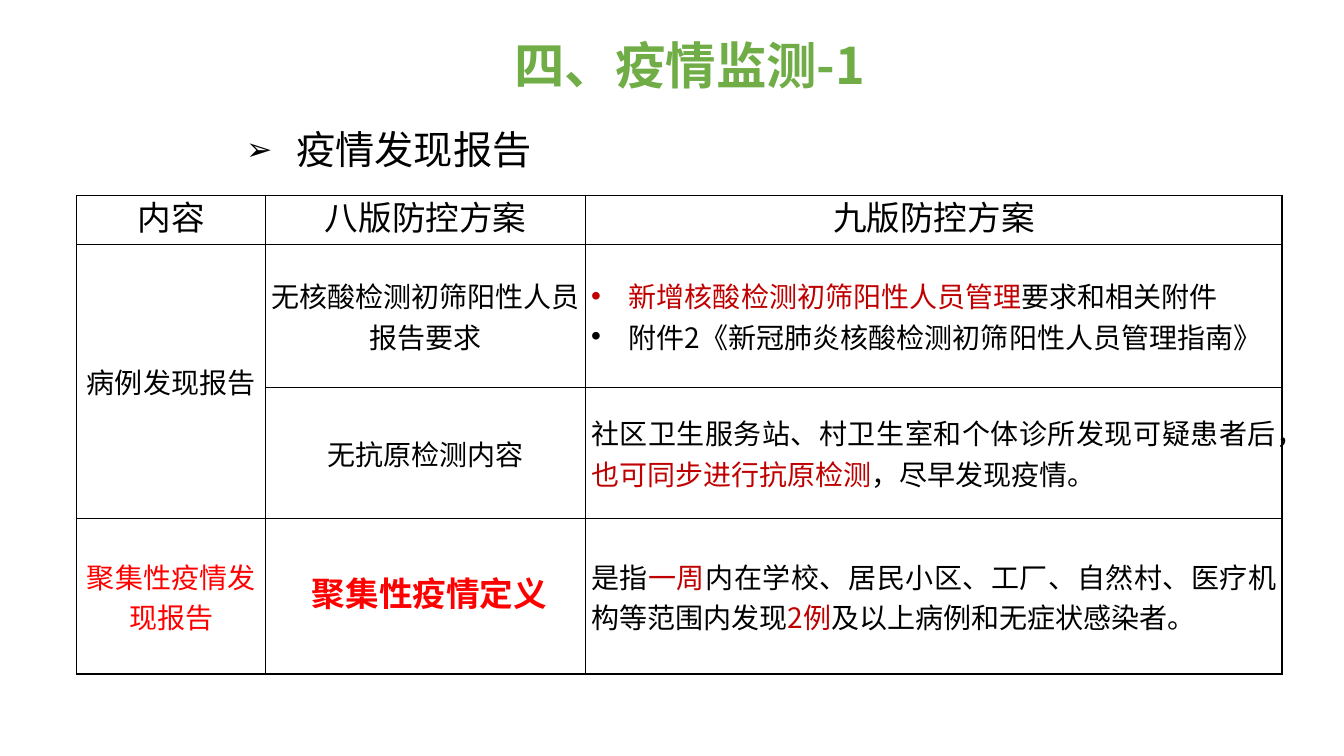
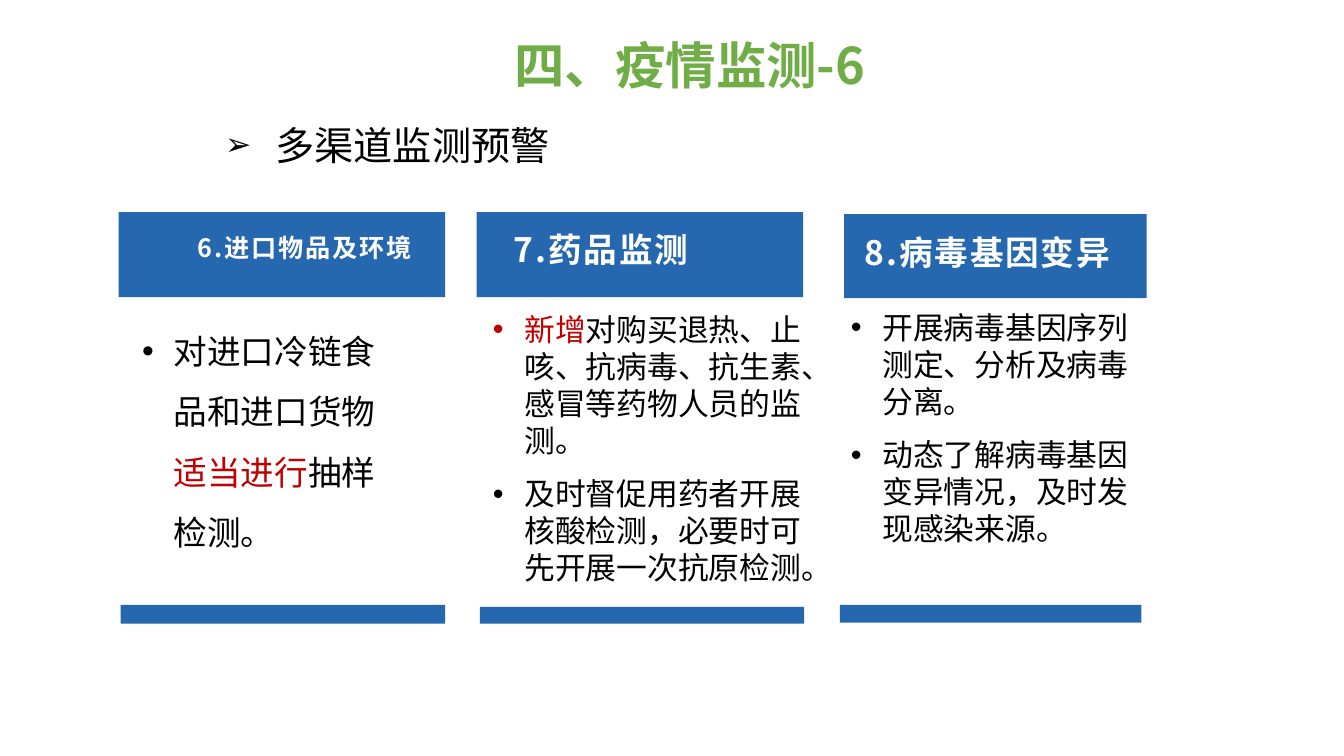
from lxml import etree
from pptx import Presentation
from pptx.dml.color import RGBColor
from pptx.enum.shapes import MSO_SHAPE
from pptx.enum.text import MSO_ANCHOR, MSO_AUTO_SIZE, PP_ALIGN
from pptx.oxml.ns import qn
from pptx.util import Pt

PX = 9525
FONT = "Noto Sans CJK SC"
COLORS = {"title": "70AD47", "ink": "000000", "mark": "C00000",
          "alert": "FF0000", "band": "2668AF", "white": "FFFFFF"}
MID, TOP = MSO_ANCHOR.MIDDLE, MSO_ANCHOR.TOP
CENTER, LEFT, JUST = PP_ALIGN.CENTER, PP_ALIGN.LEFT, PP_ALIGN.JUSTIFY
RECT = MSO_SHAPE.RECTANGLE
FIXED, GROW = MSO_AUTO_SIZE.NONE, MSO_AUTO_SIZE.SHAPE_TO_FIT_TEXT
TITLE_ONLY = 5

# In every text, the parts between bars take the "mark" colour.
TITLE_BOX = (225, 35, 864, 53)
TOPICS = [
    {"title": "四、疫情监测-1", "head": "疫情发现报告", "box": (225, 115, 408, 55)},
    {"title": "四、疫情监测-6", "head": "多渠道监测预警", "box": (205, 111, 408, 55)},
]

GRID = {"at": (73, 186), "cols": [180, 305, 663], "rows": [47, 136, 125, 148]}
ROWS = [
    [("head", ["内容"]), ("head", ["八版防控方案"]), ("head", ["九版防控方案"])],
    [("cell", ["病例发现报告"]), ("cell", ["无核酸检测初筛阳性人员报告要求"]),
     ("list", ["|新增核酸检测初筛阳性人员管理|要求和相关附件",
               "附件2《新冠肺炎核酸检测初筛阳性人员管理指南》"])],
    [None, ("cell", ["无抗原检测内容"]),
     ("prose", ["社区卫生服务站、村卫生室和个体诊所发现可疑患者后，"
                "|也可同步进行抗原检测|，尽早发现疫情。"])],
    [("alert", ["聚集性疫情发现报告"]), ("term", [" 聚集性疫情定义"]),
     ("prose", ["是指|一周|内在学校、居民小区、工厂、自然村、医疗机构等范围内发现"
                "|2例|及以上病例和无症状感染者。"])],
]
MERGE = ((1, 0), (2, 0))

CARDS = [
    {"band": (113, 202, 311, 81), "foot": (115, 576, 309, 18),
     "label": (155, 217, 270, 43), "body": (126, 291, 270, 257),
     "name": "6.进口物品及环境", "size": 18, "wrap": True, "style": "loose",
     "text": ["对进口冷链食品和进口货物|适当进行|抽样检测。"]},
    {"band": (454, 202, 311, 81), "foot": (457, 578, 309, 16),
     "label": (424, 213, 297, 54), "body": (460, 291, 316, 302),
     "name": "7.药品监测", "size": 24, "wrap": True, "style": "body",
     "text": ["|新增|对购买退热、止咳、抗病毒、抗生素、感冒等药物人员的监测。",
              "及时督促用药者开展核酸检测，必要时可先开展一次抗原检测。"]},
    {"band": (804, 204, 288, 80), "foot": (800, 576, 287, 17),
     "label": (810, 216, 261, 53), "body": (801, 289, 285, 261),
     "name": "8.病毒基因变异", "size": 24, "wrap": False, "style": "body",
     "text": ["开展病毒基因序列测定、分析及病毒分离。",
              "动态了解病毒基因变异情况，及时发现感染来源。"]},
]

ROW = {"alignment": CENTER, "line_spacing": Pt(29)}
WIDE = {**ROW, "alignment": JUST}
ITEM = {"alignment": LEFT, "space_before": Pt(6), "space_after": Pt(6)}
STYLES = {
    "title": {"size": 36, "bold": True, "color": "title",
              "para": {"alignment": CENTER, "line_spacing": 1.0}},
    "topic": {"size": 28, "para": {"alignment": JUST, "space_before": Pt(5.6)},
              "bullet": "➢", "scale": 80, "indent": 48},
    "head": {"size": 24, "para": ROW},
    "cell": {"size": 20, "para": ROW},
    "alert": {"size": 20, "color": "alert", "para": ROW},
    "term": {"size": 24, "bold": True, "color": "alert", "para": ROW},
    "prose": {"size": 20, "para": WIDE},
    "list": {"size": 20, "para": WIDE, "bullet": "•", "indent": 36},
    "label": {"bold": True, "color": "white", "para": {"alignment": CENTER}, "track": 130},
    "body": {"size": 22, "para": ITEM, "bullet": "•", "indent": 30},
    "loose": {"size": 24, "para": {**ITEM, "line_spacing": 1.5}, "bullet": "•", "indent": 30},
}


def apply(target, values):
    for key, value in values.items():
        setattr(target, key, value)


def rgb(name):
    return RGBColor.from_string(COLORS[name])


def scale(box):
    return [n * PX for n in box]


def node(parent, tag, **attrs):
    return etree.SubElement(parent, qn(tag), attrs)


def dot(para, style):
    """Give a paragraph its bullet and hanging indent."""
    props = para._p.get_or_add_pPr()
    step = style["indent"] * PX
    props.set("marL", str(step))
    props.set("indent", str(-step))
    if "scale" in style:
        node(props, "a:buSzPct", val=str(style["scale"] * 1000))
    node(props, "a:buFont", typeface="Arial")
    node(props, "a:buChar", char=style["bullet"])


def write(frame, lines, kind, **extra):
    style = {"color": "ink", "bold": False, **STYLES[kind], **extra}
    for i, line in enumerate(lines):
        para = frame.add_paragraph() if i else frame.paragraphs[0]
        apply(para, style["para"])
        if "bullet" in style:
            dot(para, style)
        for j, part in enumerate(line.split("|")):
            if not part:
                continue
            run = para.add_run()
            run.text = part
            apply(run.font, {"size": Pt(style["size"]), "bold": style["bold"], "name": FONT})
            run.font.color.rgb = rgb("mark" if j % 2 else style["color"])
            props = run._r.get_or_add_rPr()
            props.set("lang", "zh-CN")
            if "track" in style:
                props.set("spc", str(style["track"]))
            node(props, "a:ea", typeface=FONT)


def add_text(slide, box, lines, kind, wrap=True, **extra):
    frame = slide.shapes.add_textbox(*scale(box)).text_frame
    apply(frame, {"word_wrap": wrap, "auto_size": GROW, "vertical_anchor": TOP})
    write(frame, lines, kind, **extra)


def add_bar(slide, box):
    bar = slide.shapes.add_shape(RECT, *scale(box))
    bar.shadow.inherit = False
    bar.fill.solid()
    bar.fill.fore_color.rgb = rgb("band")
    bar.line.fill.background()


def start(deck, topic):
    """Add a slide with its title and topic line."""
    slide = deck.slides.add_slide(deck.slide_layouts[TITLE_ONLY])
    title = slide.shapes.title
    apply(title, dict(zip(("left", "top", "width", "height"), scale(TITLE_BOX))))
    apply(title.text_frame, {"word_wrap": True, "auto_size": FIXED, "vertical_anchor": MID})
    write(title.text_frame, [topic["title"]], "title")
    add_text(slide, topic["box"], [topic["head"]], "topic")
    return slide


def frame_cell(cell):
    """Clear the fill, set the insets and rule all four sides."""
    cell.fill.background()
    apply(cell, {"vertical_anchor": MID, "margin_left": 5 * PX, "margin_right": 5 * PX,
                 "margin_top": 0, "margin_bottom": 0})
    props = cell._tc.get_or_add_tcPr()
    for i, side in enumerate("LRTB"):
        line = node(props, f"a:ln{side}", w=str(Pt(1)))
        node(node(line, "a:solidFill"), "a:srgbClr", val=COLORS["ink"])
        props.insert(i, line)


def add_grid(slide):
    cols, rows = GRID["cols"], GRID["rows"]
    box = scale((*GRID["at"], sum(cols), sum(rows)))
    table = slide.shapes.add_table(len(rows), len(cols), *box).table
    apply(table, {"first_row": False, "horz_banding": False})
    for col, width in zip(table.columns, cols):
        col.width = width * PX
    for row, height in zip(table.rows, rows):
        row.height = height * PX
    for r, row in enumerate(ROWS):
        for c, entry in enumerate(row):
            cell = table.cell(r, c)
            frame_cell(cell)
            if entry:
                kind, lines = entry
                write(cell.text_frame, lines, kind)
    first, last = MERGE
    table.cell(*first).merge(table.cell(*last))


def add_card(slide, card):
    for part in ("band", "foot"):
        add_bar(slide, card[part])
    add_text(slide, card["body"], card["text"], card["style"])
    add_text(slide, card["label"], [card["name"]], "label", card["wrap"], size=card["size"])


def main():
    deck = Presentation()
    apply(deck, {"slide_width": 1280 * PX, "slide_height": 720 * PX})
    report, watch = [start(deck, topic) for topic in TOPICS]
    add_grid(report)
    for card in CARDS:
        add_card(watch, card)
    deck.save("out.pptx")


if __name__ == "__main__":
    main()
